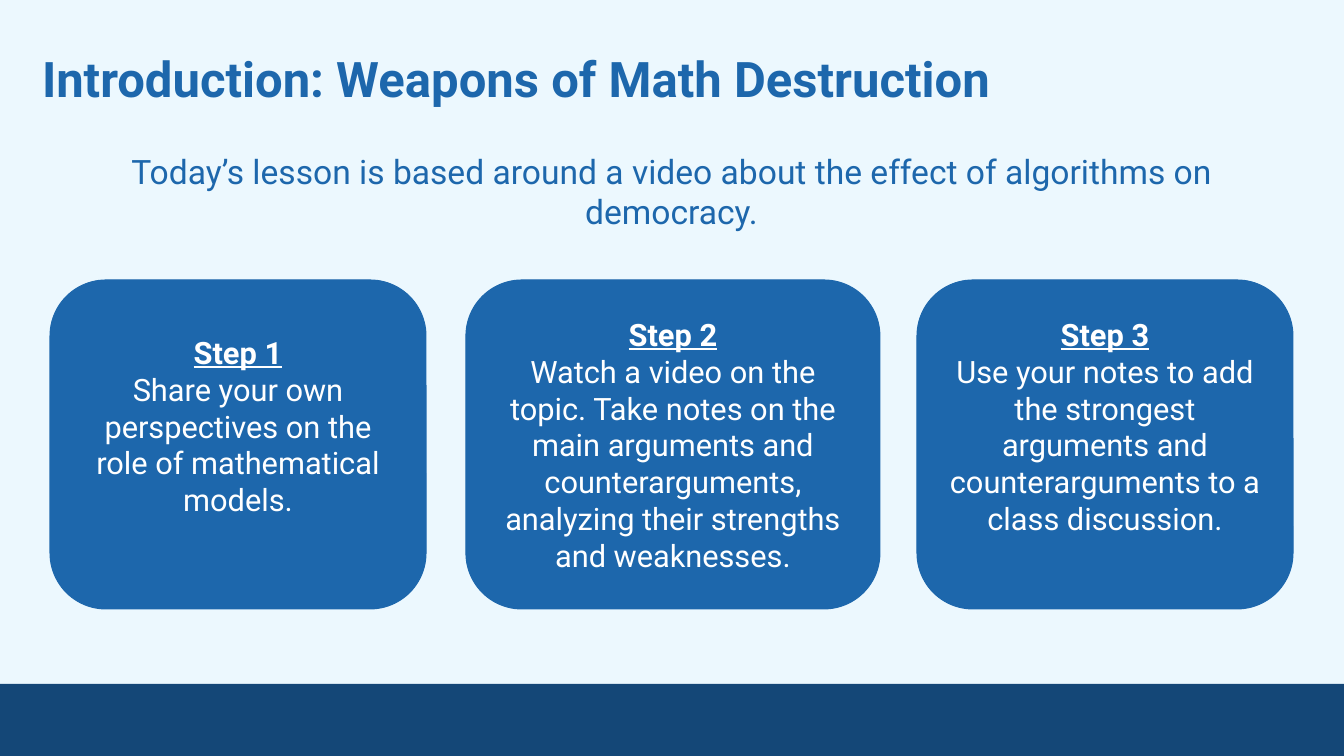
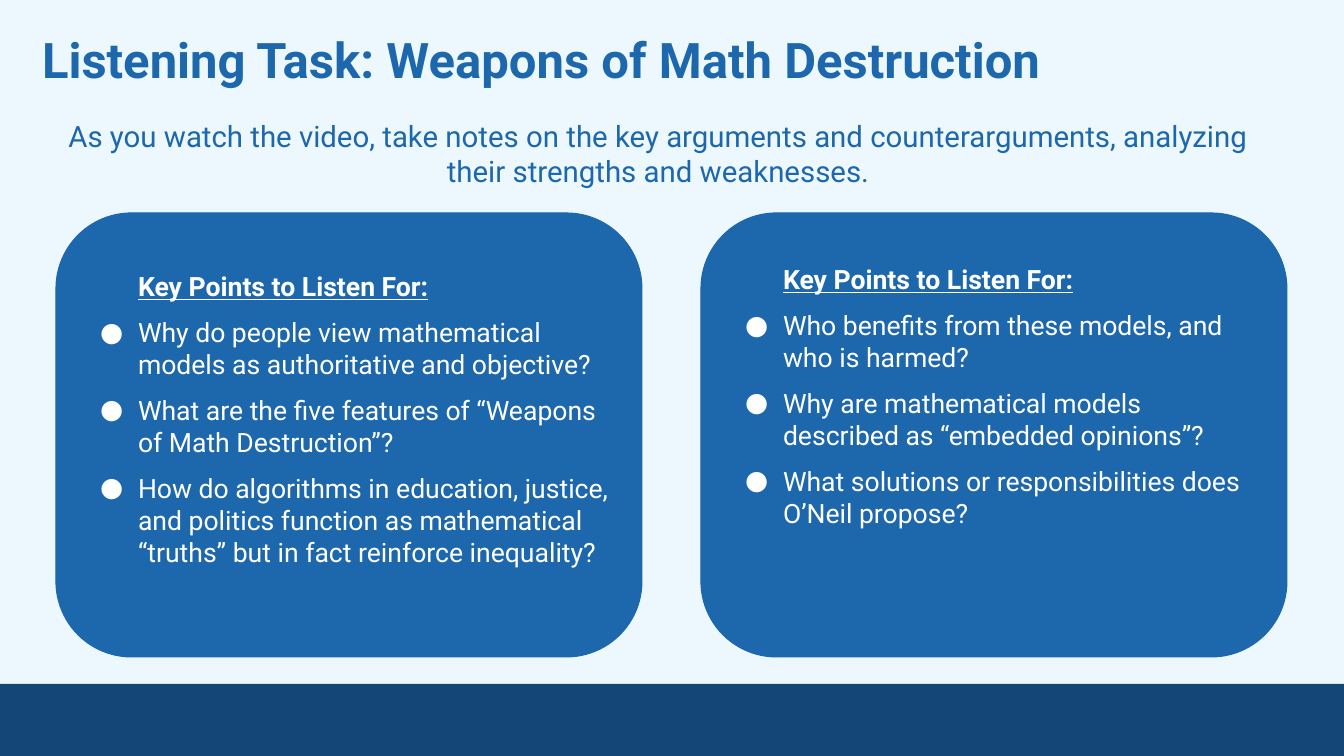
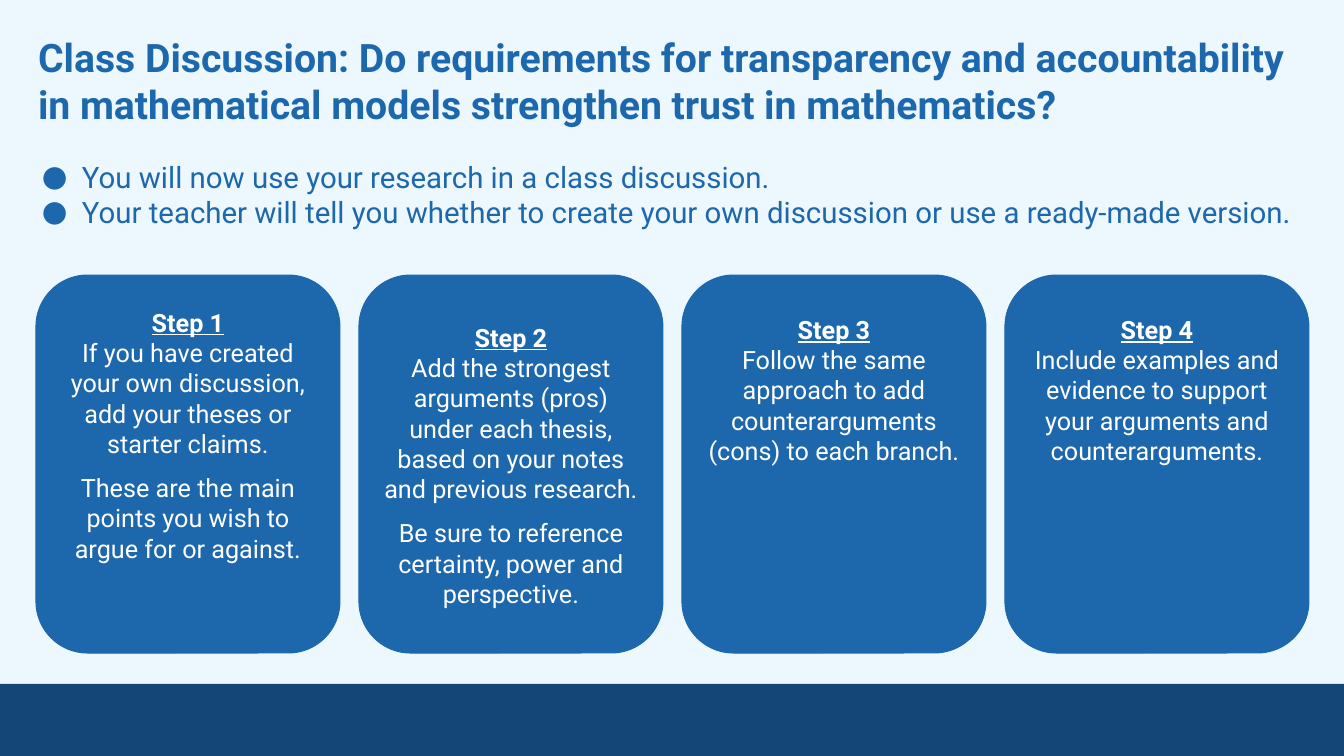
from pptx import Presentation
from pptx.dml.color import RGBColor
from pptx.enum.shapes import MSO_SHAPE as Shape
from pptx.enum.text import MSO_ANCHOR as Anchor, MSO_AUTO_SIZE as Auto, PP_ALIGN as Align
from pptx.oxml import parse_xml
from pptx.oxml.ns import nsdecls
from pptx.util import Pt

SCALE = 914400 / 100.8
BLUE, NAVY, PALE, WHITE = "1D67AC", "144777", "ECF8FE", "FFFFFF"
CENTER, LEFT = Align.CENTER, Align.LEFT


def px(n):
    return round(n * SCALE)


def write(frame, rows, size, color, align=LEFT, pad=10, top=None, head=False,
          bold=False, gap=0, marks=(), hang=0):
    look = {"word_wrap": True, "auto_size": Auto.NONE, "vertical_anchor": Anchor.TOP,
            "margin_left": px(pad), "margin_right": px(pad),
            "margin_top": px(pad if top is None else top), "margin_bottom": px(pad)}
    for key, val in look.items():
        setattr(frame, key, val)
    for i, text in enumerate(rows):
        para = frame.paragraphs[0] if i == 0 else frame.add_paragraph()
        para.alignment = align
        first = head and i == 0
        if i > 0 and (marks or i > 1):
            para.space_before = Pt(gap)
        if marks:
            props = para._p.get_or_add_pPr()
            props.set("marL", str(px(50)))
            props.set("indent", str(-px(hang) if i in marks else 0))
            if i in marks:
                for xml in (f'<a:buClr {nsdecls("a")}><a:srgbClr val="{color}"/></a:buClr>',
                            f'<a:buFont {nsdecls("a")} typeface="Roboto"/>',
                            f'<a:buChar {nsdecls("a")} char="●"/>'):
                    props.append(parse_xml(xml))
        run = para.add_run()
        run.text = text
        font = {"name": "Roboto", "size": Pt(size), "bold": bold or first, "underline": first}
        for key, val in font.items():
            setattr(run.font, key, val)
        run.font.color.rgb = RGBColor.from_string(color)


def block(slide, kind, box, color):
    shape = slide.shapes.add_shape(kind, *map(px, box))
    shape.shadow.inherit = False
    shape.fill.solid()
    shape.fill.fore_color.rgb = RGBColor.from_string(color)
    shape.line.color.rgb = RGBColor.from_string(color)
    shape.line.width = Pt(0.75)
    return shape


POINTS = "Key Points to Listen For:"
DECK = [
    {"title": "Introduction: Weapons of Math Destruction",
     "place": (29, 35, 1229, 87), "size": 35,
     "intro": ["Today’s lesson is based around a video about the effect of algorithms on democracy."],
     "area": (57, 141, 1229, 142), "lead": {"size": 24, "align": CENTER},
     "row": (280, 329), "body": {"size": 22, "align": CENTER},
     "cards": [
         (50, 376, 37, ["Step 1", "Share your own perspectives on the role of mathematical models."]),
         (466, 414, 19, ["Step 2", "Watch a video on the topic. Take notes on the main arguments and "
                         "counterarguments, analyzing their strengths and weaknesses."]),
         (917, 376, 19, ["Step 3", "Use your notes to add the strongest arguments and "
                         "counterarguments to a class discussion."])]},
    {"title": "Listening Task: Weapons of Math Destruction",
     "place": (29, 16, 1229, 87), "size": 35,
     "intro": ["As you watch the video, take notes on the key arguments and counterarguments, "
               "analyzing their strengths and weaknesses."],
     "area": (29, 108, 1258, 92), "lead": {"size": 21, "align": CENTER},
     "row": (213, 444), "body": {"size": 19, "gap": 10, "marks": (1, 2, 3), "hang": 38},
     "cards": [
         (56, 586, 35, [POINTS,
                        "Why do people view mathematical models as authoritative and objective?",
                        "What are the five features of “Weapons of Math Destruction”?",
                        "How do algorithms in education, justice, and politics function as "
                        "mathematical “truths” but in fact reinforce inequality?"]),
         (701, 586, 28, [POINTS,
                         "Who benefits from these models, and who is harmed?",
                         "Why are mathematical models described as “embedded opinions”?",
                         "What solutions or responsibilities does O’Neil propose?"])]},
    {"title": "Class Discussion: Do requirements for transparency and accountability in "
              "mathematical models strengthen trust in mathematics?",
     "place": (25, 20, 1293, 122), "size": 28,
     "intro": ["You will now use your research in a class discussion.",
               "Your teacher will tell you whether to create your own discussion or use a "
               "ready-made version."],
     "area": (22, 149, 1300, 92), "lead": {"size": 21, "marks": (0, 1), "hang": 40},
     "row": (275, 378), "body": {"size": 18, "align": CENTER, "gap": 10},
     "cards": [(36 + 323 * i, 304, top, [f"Step {i + 1}", *rows]) for i, (top, rows) in enumerate([
         (17, ["If you have created your own discussion, add your theses or starter claims.",
               "These are the main points you wish to argue for or against."]),
         (32, ["Add the strongest arguments (pros) under each thesis, based on your notes "
               "and previous research.",
               "Be sure to reference certainty, power and perspective."]),
         (24, ["Follow the same approach to add counterarguments (cons) to each branch."]),
         (24, ["Include examples and evidence to support your arguments and counterarguments."])])]},
]

prs = Presentation()
prs.slide_width, prs.slide_height = px(1344), px(756)
master = prs.slide_master
master.background.fill.solid()
master.background.fill.fore_color.rgb = RGBColor.from_string(PALE)

for n, plan in enumerate(DECK):
    slide = prs.slides.add_slide(prs.slide_layouts[5])
    if n == 0:
        band = block(slide, Shape.RECTANGLE, (-2, 684, 1348, 72), NAVY)
        band.line.fill.background()
        master.element.cSld.spTree.append(band.element)

    title = slide.shapes.title
    title.left, title.top, title.width, title.height = map(px, plan["place"])
    write(title.text_frame, [plan["title"]], plan["size"], BLUE, pad=13, bold=True)

    intro = slide.shapes.add_textbox(*map(px, plan["area"]))
    write(intro.text_frame, plan["intro"], color=BLUE, **plan["lead"])

    y, high = plan["row"]
    for x, wide, top, rows in plan["cards"]:
        card = block(slide, Shape.ROUNDED_RECTANGLE, (x, y, wide, high), BLUE)
        card.adjustments[0] = 0.17
        write(card.text_frame, rows, color=WHITE, top=top, head=True, **plan["body"])

prs.save("out.pptx")
